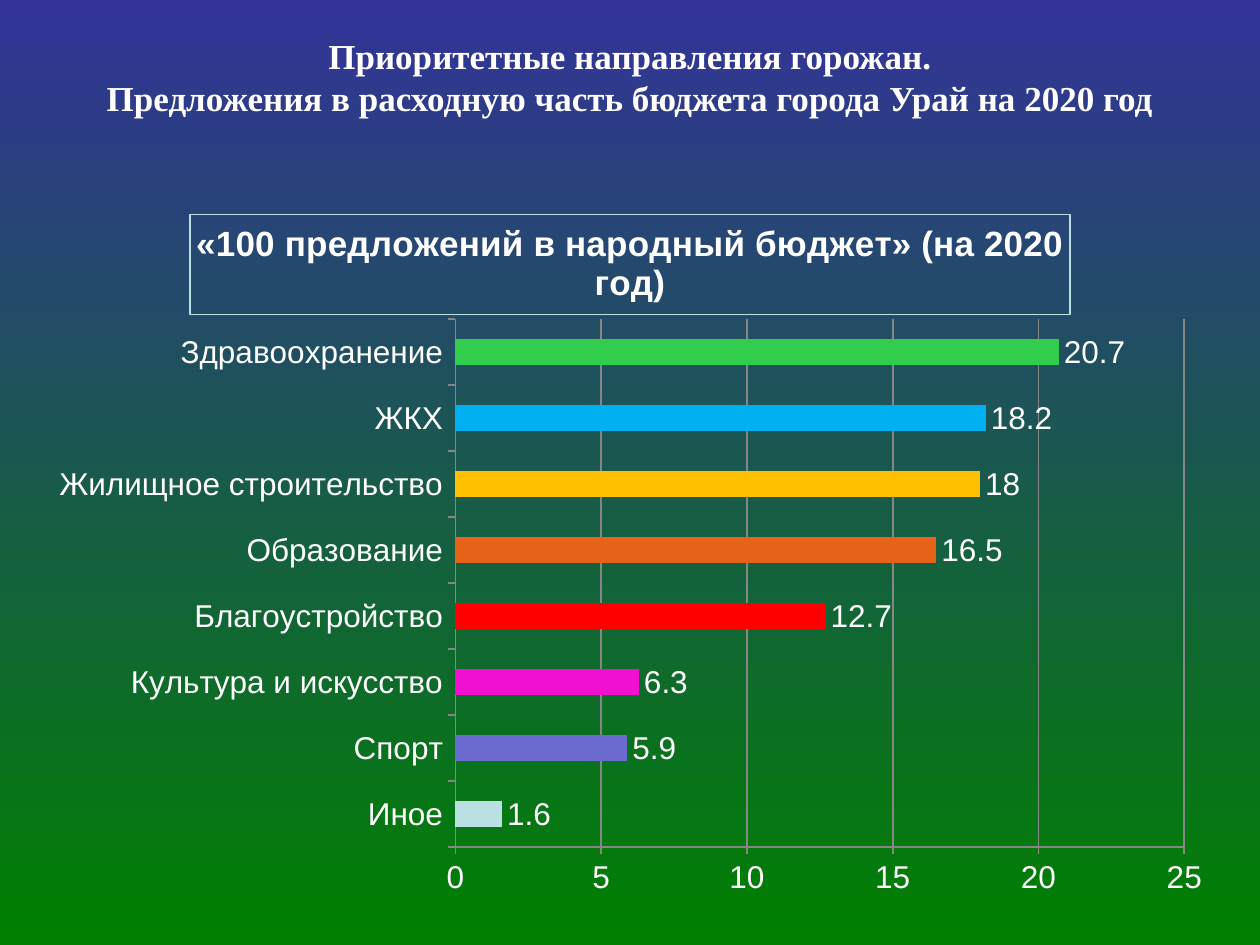
from dataclasses import dataclass

from lxml import etree
from pptx import Presentation
from pptx import util as u
from pptx.chart.data import CategoryChartData
from pptx.dml.color import RGBColor
from pptx.enum import chart as c
from pptx.enum import text
from pptx.oxml.ns import qn

PX = u.Inches(1) // 126


@dataclass(frozen=True)
class Theme:
    top: str = "333399"
    bottom: str = "008000"
    ink: str = "FFFFFF"
    grid: str = "868686"
    frame: str = "BBE0E3"
    heading_font: str = "Times New Roman"
    chart_font: str = "Arial"
    heading_size: int = 20
    label_size: int = 18


THEME = Theme()
HEADING = ("Приоритетные направления горожан.\v"
           "Предложения в расходную часть бюджета города Урай на 2020 год")
CHART_TITLE = "«100 предложений в народный бюджет» (на 2020 год)"

# Category, value and bar colour, from the bottom bar up
PRIORITIES = [
    ("Иное", 1.6, "BBE0E3"),
    ("Спорт", 5.9, "6B6BCF"),
    ("Культура и искусство", 6.3, "EF11CF"),
    ("Благоустройство", 12.7, "FF0000"),
    ("Образование", 16.5, "E76319"),
    ("Жилищное строительство", 18, "FFC000"),
    ("ЖКХ", 18.2, "00B0F0"),
    ("Здравоохранение", 20.7, "33CD4D"),
]


def px(*lengths):
    return [length * PX for length in lengths]


def rgb(value):
    return RGBColor.from_string(value)


def style_font(font, name, size, bold=False):
    font.name = name
    font.size = u.Pt(size)
    font.bold = bold
    font.color.rgb = rgb(THEME.ink)


def style_line(line, color, width=1):
    line.color.rgb = rgb(color)
    line.width = u.Pt(width)


def paint_background(slide):
    fill = slide.background.fill
    fill.gradient()
    fill.gradient_angle = 270
    for stop, color in zip(fill.gradient_stops, (THEME.top, THEME.bottom)):
        stop.color.rgb = rgb(color)


def add_heading(slide, box):
    frame = slide.shapes.add_textbox(*px(*box)).text_frame
    frame.word_wrap = True
    frame.vertical_anchor = text.MSO_ANCHOR.MIDDLE
    paragraph = frame.paragraphs[0]
    paragraph.text = HEADING
    paragraph.alignment = text.PP_ALIGN.CENTER
    style_font(paragraph.font, THEME.heading_font, THEME.heading_size, True)


def set_layout(element, index, **values):
    """Place a chart part by fractions of the chart area."""
    for old in element.findall(qn("c:layout")):
        element.remove(old)
    layout = etree.Element(qn("c:layout"))
    manual = etree.SubElement(layout, qn("c:manualLayout"))
    for tag, value in values.items():
        etree.SubElement(manual, qn(f"c:{tag}"), val=str(value))
    element.insert(index, layout)


def style_axis(axis):
    axis.major_tick_mark = c.XL_TICK_MARK.OUTSIDE
    axis.minor_tick_mark = c.XL_TICK_MARK.NONE
    style_font(axis.tick_labels.font, THEME.chart_font, THEME.label_size)
    style_line(axis.format.line, THEME.grid)


def style_title(chart):
    title = chart.chart_title
    title.include_in_layout = False
    paragraph = title.text_frame.paragraphs[0]
    paragraph.text = CHART_TITLE
    style_font(paragraph.font, THEME.chart_font, THEME.heading_size, True)
    title.format.fill.background()
    style_line(title.format.line, THEME.frame, 0.75)
    set_layout(title._element, 1, xMode="edge", yMode="edge", x=0.13, y=0.03)


def add_priorities_chart(slide, box):
    names, values, colors = zip(*PRIORITIES)
    data = CategoryChartData()
    data.categories = names
    data.add_series("Series 1", values)
    chart = slide.shapes.add_chart(
        c.XL_CHART_TYPE.BAR_CLUSTERED, *px(*box), data).chart
    chart.has_legend = False
    style_font(chart.font, THEME.chart_font, THEME.label_size)
    style_title(chart)

    # Axes and plot area
    style_axis(chart.category_axis)
    axis = chart.value_axis
    style_axis(axis)
    axis.minimum_scale, axis.maximum_scale, axis.major_unit = 0, 25, 5
    axis.has_major_gridlines = True
    style_line(axis.major_gridlines.format.line, THEME.grid)
    plot_area = chart._chartSpace.chart.plotArea
    set_layout(plot_area, 0, layoutTarget="inner", xMode="edge", yMode="edge",
               x=0.353, y=0.176, w=0.612, h=0.736)

    # Bars and value labels
    plot = chart.plots[0]
    plot.vary_by_categories = False
    plot.gap_width = 150
    series = plot.series[0]
    series.format.fill.solid()
    series.format.fill.fore_color.rgb = rgb(colors[0])
    for index, color in enumerate(colors[1:], 1):
        fill = series.points[index].format.fill
        fill.solid()
        fill.fore_color.rgb = rgb(color)
    labels = series.data_labels
    labels.show_value = True
    labels.position = c.XL_LABEL_POSITION.OUTSIDE_END
    style_font(labels.font, THEME.chart_font, THEME.label_size)


def main():
    presentation = Presentation()
    presentation.slide_width, presentation.slide_height = px(1260, 945)
    slide = presentation.slides.add_slide(presentation.slide_layouts[6])
    paint_background(slide)
    add_heading(slide, (63, 38, 1134, 77))
    add_priorities_chart(slide, (35, 193, 1191, 717))
    presentation.save("out.pptx")


if __name__ == "__main__":
    main()
